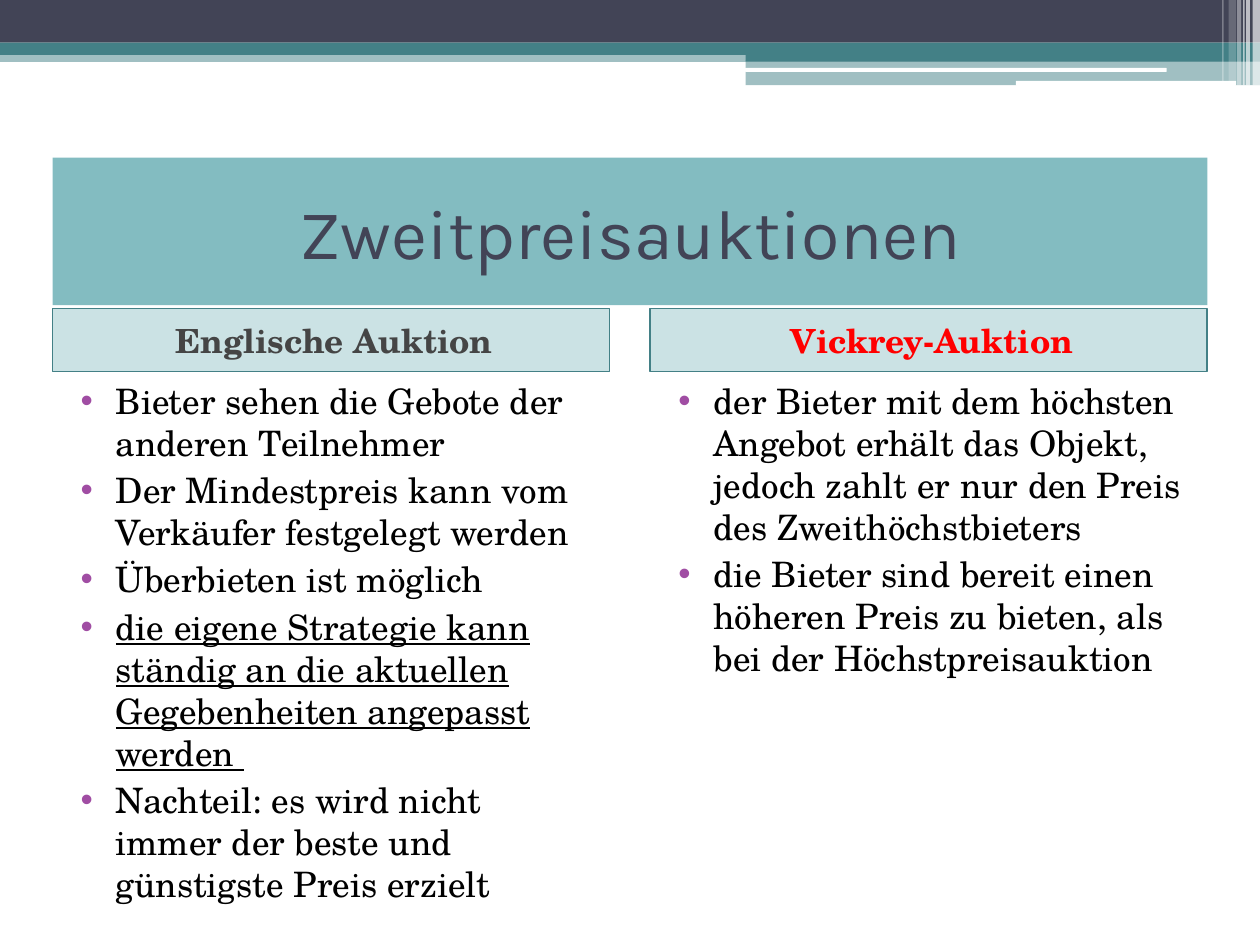
from lxml import etree
from pptx import Presentation
from pptx.dml.color import RGBColor
from pptx.enum.shapes import MSO_SHAPE
from pptx.enum.text import MSO_ANCHOR, MSO_AUTO_SIZE, PP_ALIGN
from pptx.oxml.ns import qn
from pptx.util import Cm, Pt

RECT, ROUNDED = MSO_SHAPE.RECTANGLE, MSO_SHAPE.ROUNDED_RECTANGLE
MIDDLE, TOP = MSO_ANCHOR.MIDDLE, MSO_ANCHOR.TOP
CENTER, LEFT = PP_ALIGN.CENTER, PP_ALIGN.LEFT
NO_AUTOFIT = MSO_AUTO_SIZE.NONE
COMPARISON_LAYOUT = 4

TITLE_FONT, BODY_FONT = "Karla", "TeX Gyre Schola"
COLORS = {
    "navy": "424456", "teal": "438086", "white": "FFFFFF",
    "title_fill": "83BCC1", "heading_fill": "328E97", "heading": "454545",
    "highlight": "FF0000", "text": "000000", "bullet": "A04DA3",
}

# Grid in cm
MARGIN, CONTENT_W, COLUMN_W = 1.06, 23.28, 11.23
COLUMN_LEFTS = (MARGIN, MARGIN + CONTENT_W - COLUMN_W)

# Header bands: left, top, width, height (cm), colour, opacity in percent
BANDS = [
    (0, 1.02, 25.4, 0.23, "teal", 50),
    (0, 0, 25.4, 0.86, "navy", 100),
    (0, 0.86, 25.4, 0.25, "teal", 100),
    (15.03, 0.99, 10.37, 0.25, "teal", 100),
    (15.03, 1.22, 10.37, 0.5, "teal", 50),
]
HIGHLIGHTS = [(15.02, 1.37, 8.5, 0.08), (20.48, 1.63, 4.44, 0.1)]
# Vertical stripes at the right edge: left, width, height (cm), opacity
STRIPES = [
    (25.25, 0.15, 1.73, 65), (25.12, 0.08, 1.73, 65), (25.06, 0.03, 1.73, 60),
    (24.94, 0.08, 1.73, 40), (24.77, 0.15, 1.63, 20), (24.64, 0.03, 1.63, 30),
]

# Heading, heading colour, list fill, points as (text, underlined)
COLUMNS = [
    ("Englische Auktion", "heading", "white", [
        ("Bieter sehen die Gebote der anderen Teilnehmer", False),
        ("Der Mindestpreis kann vom Verkäufer festgelegt werden", False),
        ("Überbieten ist möglich", False),
        ("die eigene Strategie kann ständig an die aktuellen "
         "Gegebenheiten angepasst werden ", True),
        ("Nachteil: es wird nicht immer der beste und günstigste "
         "Preis erzielt", False),
    ]),
    ("Vickrey-Auktion", "highlight", None, [
        ("der Bieter mit dem höchsten Angebot erhält das Objekt, jedoch "
         "zahlt er nur den Preis des Zweithöchstbieters", False),
        ("die Bieter sind bereit einen höheren Preis zu bieten, als bei "
         "der Höchstpreisauktion", False),
    ]),
]


def rgb(name):
    return RGBColor.from_string(COLORS[name])


def set_fill(shape, color, opacity=100):
    shape.fill.solid()
    shape.fill.fore_color.rgb = rgb(color)
    if opacity < 100:
        fill_color = next(shape.element.spPr.iter(qn("a:srgbClr")))
        etree.SubElement(fill_color, qn("a:alpha"), val=str(opacity * 1000))


def add_band(slide, left, top, width, height, color, opacity=100, kind=RECT):
    band = slide.shapes.add_shape(kind, Cm(left), Cm(top), Cm(width), Cm(height))
    band.shadow.inherit = False
    set_fill(band, color, opacity)
    band.line.fill.background()


def place(placeholder, left, top, width, height, anchor):
    placeholder.left, placeholder.top = Cm(left), Cm(top)
    placeholder.width, placeholder.height = Cm(width), Cm(height)
    frame = placeholder.text_frame
    frame.word_wrap = True
    frame.auto_size = NO_AUTOFIT
    frame.vertical_anchor = anchor
    return frame


def add_run(paragraph, text, font, size, color, bold=False, underline=False):
    run = paragraph.add_run()
    run.text = text
    run.font.name, run.font.size = font, Pt(size)
    run.font.color.rgb = rgb(color)
    run.font.bold, run.font.underline = bold, underline


def format_paragraph(paragraph, align, margin, indent=0):
    paragraph.alignment = align
    paragraph.space_before = Pt(3)
    properties = paragraph._p.get_or_add_pPr()
    properties.set("marL", str(Cm(margin)))
    properties.set("indent", str(Cm(indent)))
    return properties


def add_bullet(properties):
    bullet_color = etree.SubElement(properties, qn("a:buClr"))
    etree.SubElement(bullet_color, qn("a:srgbClr"), val=COLORS["bullet"])
    etree.SubElement(properties, qn("a:buFont"), typeface="Arial")
    etree.SubElement(properties, qn("a:buChar"), char="•")


def fill_title(title, text):
    frame = place(title, MARGIN, 3.18, CONTENT_W, 2.97, MIDDLE)
    set_fill(title, "title_fill")
    frame.paragraphs[0].alignment = CENTER
    add_run(frame.paragraphs[0], text, TITLE_FONT, 40, "navy")


def fill_heading(heading, left, text, color):
    frame = place(heading, left, 6.22, COLUMN_W, 1.27, MIDDLE)
    set_fill(heading, "heading_fill", 25)
    heading.line.color.rgb = rgb("teal")
    heading.line.width = Pt(1)
    format_paragraph(frame.paragraphs[0], CENTER, 0.13)
    add_run(frame.paragraphs[0], text, BODY_FONT, 19, color, bold=True)


def fill_list(body, left, points, background):
    frame = place(body, left, 7.52, COLUMN_W, 10.8, TOP)
    if background:
        set_fill(body, background)
    for number, (text, underline) in enumerate(points):
        paragraph = frame.add_paragraph() if number else frame.paragraphs[0]
        add_bullet(format_paragraph(paragraph, LEFT, 1.02, -0.71))
        add_run(paragraph, text, BODY_FONT, 20, "text", underline=underline)


def main():
    prs = Presentation()
    prs.slide_width, prs.slide_height = Cm(25.4), Cm(19.05)
    slide = prs.slides.add_slide(prs.slide_layouts[COMPARISON_LAYOUT])

    # Header decoration
    for band in BANDS:
        add_band(slide, *band)
    for highlight in HIGHLIGHTS:
        add_band(slide, *highlight, "white", kind=ROUNDED)
    for left, width, height, opacity in STRIPES:
        add_band(slide, left, 0, width, height, "white", opacity)

    # Title and the two compared auctions
    title, *column_parts = slide.placeholders
    fill_title(title, "Zweitpreisauktionen")
    pairs = zip(column_parts[::2], column_parts[1::2])
    for left, (heading, body), column in zip(COLUMN_LEFTS, pairs, COLUMNS):
        text, color, background, points = column
        fill_heading(heading, left, text, color)
        fill_list(body, left, points, background)

    prs.save("out.pptx")


if __name__ == "__main__":
    main()
